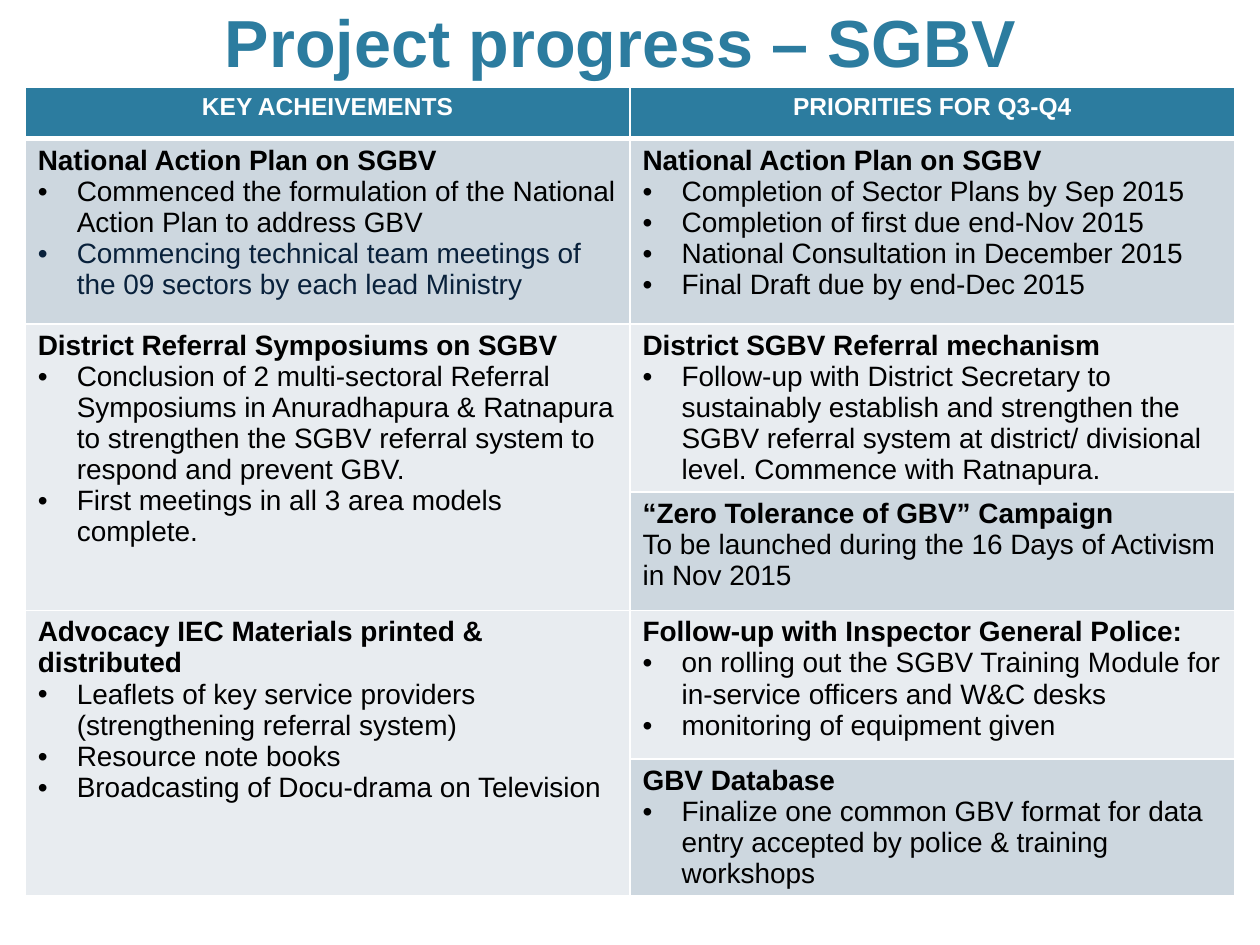
from dataclasses import dataclass

from lxml.etree import SubElement
from pptx import Presentation
from pptx.dml.color import RGBColor
from pptx.enum.text import MSO_ANCHOR as Anchor, MSO_AUTO_SIZE as AutoSize, PP_ALIGN as Align
from pptx.oxml import parse_xml
from pptx.oxml.ns import nsdecls, qn
from pptx.util import Inches, Pt

COLORS = {
    "teal": "2C7C9F",
    "white": "FFFFFF",
    "black": "000000",
    "navy": "09213B",
    "band_dark": "CDD7DF",
    "band_light": "E8ECF0",
}
FONT = "Arial"
COLUMN_WIDTH = 4.8
ROW_HEIGHTS = [0.41, 1.47, 1.22, 0.94, 1.18, 0.87]
HEADERS = ["KEY ACHEIVEMENTS", "PRIORITIES FOR Q3-Q4"]


@dataclass
class Topic:
    row: int
    col: int
    heading: str
    points: list[str]
    fill: str
    row_span: int = 1
    bulleted: bool = True
    highlighted: int | None = None  # index of the point set in navy


TOPICS = [
    Topic(1, 0, "National Action Plan on SGBV", [
        "Commenced the formulation of the National Action Plan to address GBV",
        "Commencing technical team meetings of the 09 sectors by each lead Ministry",
    ], "band_dark", highlighted=1),
    Topic(1, 1, "National Action Plan on SGBV", [
        "Completion of Sector Plans by Sep 2015",
        "Completion of first due end-Nov 2015",
        "National Consultation in December 2015",
        "Final Draft due by end-Dec 2015",
    ], "band_dark"),
    Topic(2, 0, "District Referral Symposiums on SGBV", [
        "Conclusion of 2 multi-sectoral Referral Symposiums in Anuradhapura & Ratnapura "
        "to strengthen the SGBV referral system to respond and prevent GBV.",
        "First meetings in all 3 area models complete.",
    ], "band_light", row_span=2),
    Topic(2, 1, "District SGBV Referral mechanism", [
        "Follow-up with District Secretary to sustainably establish and strengthen the SGBV "
        "referral system at district/ divisional level. Commence with Ratnapura.",
    ], "band_light"),
    Topic(3, 1, "“Zero Tolerance of GBV” Campaign", [
        "To be launched during the 16 Days of Activism in Nov 2015",
    ], "band_dark", bulleted=False),
    Topic(4, 0, "Advocacy IEC Materials printed & distributed", [
        "Leaflets of key service providers (strengthening referral system)",
        "Resource note books",
        "Broadcasting of Docu-drama on Television",
    ], "band_light", row_span=2),
    Topic(4, 1, "Follow-up with Inspector General Police:", [
        "on rolling out the SGBV Training Module for in-service officers and W&C desks",
        "monitoring of equipment given",
    ], "band_light"),
    Topic(5, 1, "GBV Database", [
        "Finalize one common GBV format for data entry accepted by police & training workshops",
    ], "band_dark"),
]


def rgb(name: str) -> RGBColor:
    return RGBColor.from_string(COLORS[name])


def style(paragraph, size: float, color: str, bold: bool) -> None:
    font = paragraph.font
    font.name, font.size, font.bold = FONT, Pt(size), bold
    font.color.rgb = rgb(color)


def add_bullet(paragraph) -> None:
    properties = paragraph._p.get_or_add_pPr()
    properties.set("marL", str(Inches(0.31)))
    properties.set("indent", str(-Inches(0.31)))
    SubElement(properties, qn("a:buFont"), typeface=FONT)
    SubElement(properties, qn("a:buChar"), char="•")


def paint_cell(cell, fill: str, bottom_width: float = 1, top_width: float = 1) -> None:
    """Fill the cell and give it white borders."""
    cell.fill.solid()
    cell.fill.fore_color.rgb = rgb(fill)
    widths = {"lnL": 1, "lnR": 1, "lnT": top_width, "lnB": bottom_width}
    for position, (side, width) in enumerate(widths.items()):
        border = parse_xml(
            f'<a:{side} {nsdecls("a")} w="{Pt(width)}"><a:solidFill>'
            f'<a:srgbClr val="{COLORS["white"]}"/></a:solidFill></a:{side}>')
        cell._tc.get_or_add_tcPr().insert(position, border)


def fill_topic(table, topic: Topic) -> None:
    cell = table.cell(topic.row, topic.col)
    last_row = topic.row + topic.row_span - 1
    if topic.row_span > 1:
        cell.merge(table.cell(last_row, topic.col))
    for row in range(topic.row, last_row + 1):
        paint_cell(table.cell(row, topic.col), topic.fill, top_width=3 if row == 1 else 1)
    heading = cell.text_frame.paragraphs[0]
    heading.text = topic.heading
    style(heading, 16, "black", True)
    for index, text in enumerate(topic.points):
        point = cell.text_frame.add_paragraph()
        point.text = text
        if topic.bulleted:
            add_bullet(point)
        style(point, 16, "navy" if index == topic.highlighted else "black", False)


def add_title(slide) -> None:
    title = slide.shapes.title
    title.left, title.top = Inches(0.6), Inches(-0.11)
    title.width, title.height = Inches(8.8), Inches(0.8)
    frame = title.text_frame
    frame.text = "Project progress – SGBV "
    frame.vertical_anchor = Anchor.BOTTOM
    frame.auto_size = AutoSize.NONE
    frame.paragraphs[0].alignment = Align.CENTER
    style(frame.paragraphs[0], 38, "teal", True)


def add_progress_table(slide) -> None:
    table = slide.shapes.add_table(
        len(ROW_HEIGHTS), len(HEADERS), Inches(0.2), Inches(0.69),
        Inches(COLUMN_WIDTH * len(HEADERS)), Inches(sum(ROW_HEIGHTS))).table
    for column in table.columns:
        column.width = Inches(COLUMN_WIDTH)
    for row, height in zip(table.rows, ROW_HEIGHTS):
        row.height = Inches(height)
    for col, text in enumerate(HEADERS):
        cell = table.cell(0, col)
        paint_cell(cell, "teal", bottom_width=3)
        header = cell.text_frame.paragraphs[0]
        header.text = text
        header.alignment = Align.CENTER
        style(header, 14, "white", True)
    for topic in TOPICS:
        fill_topic(table, topic)


def main() -> None:
    deck = Presentation()
    deck.slide_width, deck.slide_height = Inches(10), Inches(7.5)
    slide = deck.slides.add_slide(deck.slide_layouts[5])
    add_title(slide)
    add_progress_table(slide)
    deck.save("out.pptx")


if __name__ == "__main__":
    main()
